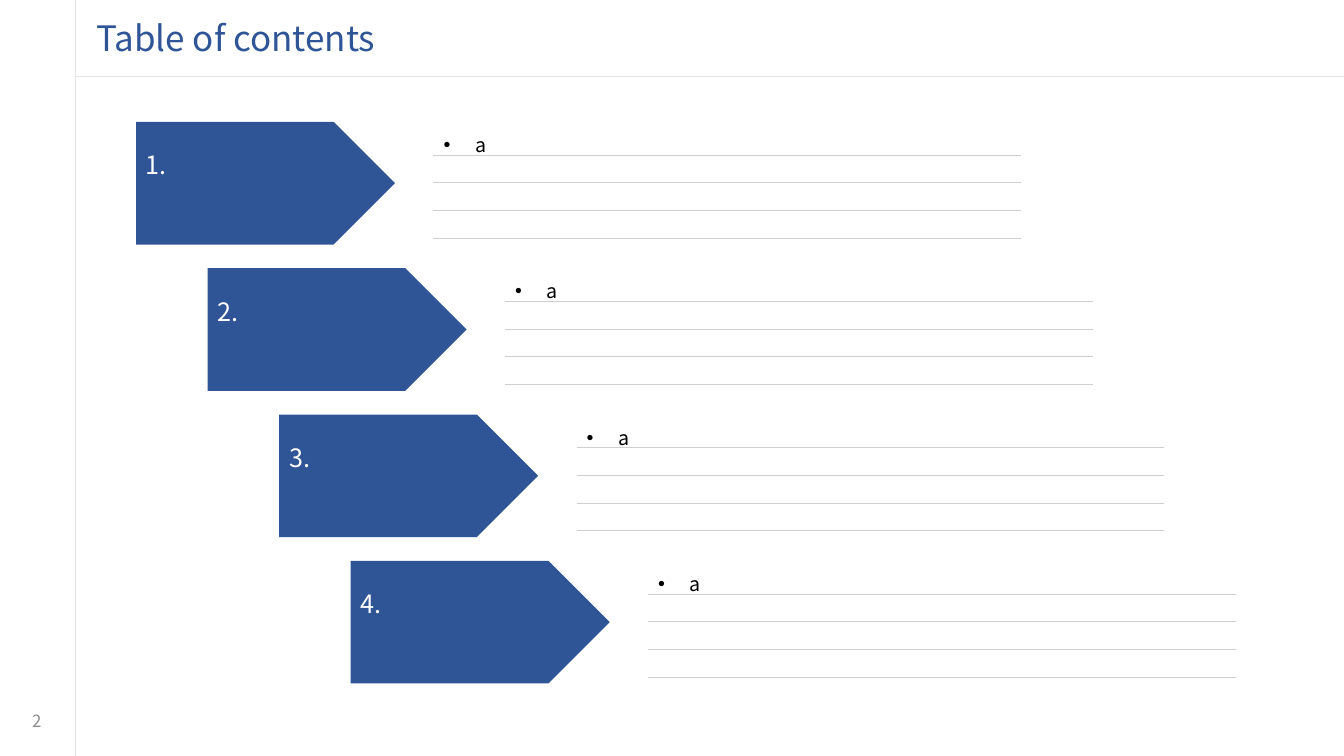
from lxml import etree
from pptx import Presentation
from pptx import util as u
from pptx.dml.color import RGBColor
from pptx.enum import shapes, text
from pptx.oxml import ns

Pt = u.Pt
FONT = "Noto Sans CJK KR"
COLORS = {"blue": "2F5597", "frame": "E7E6E6", "rule": "D0CECE",
          "number": "8C8C8C", "white": "FFFFFF", "black": "000000"}


def add_line(x1, y1, x2, y2, color):
    c = s.shapes.add_connector(shapes.MSO_CONNECTOR.STRAIGHT,
                               Pt(x1), Pt(y1), Pt(x2), Pt(y2))
    c.line.color.rgb = RGBColor.from_string(COLORS[color])
    c.line.width = Pt(0.5)
    etree.SubElement(c._element.spPr, ns.qn("a:effectLst"))


def set_text(sp, words, size, color, anchor, align, spacing, insets):
    tf = sp.text_frame
    tf.text = words
    tf.word_wrap = True
    tf.auto_size = text.MSO_AUTO_SIZE.NONE
    tf.vertical_anchor = anchor
    tf.margin_left, tf.margin_top, tf.margin_right, tf.margin_bottom = map(Pt, insets)
    p = tf.paragraphs[0]
    p.alignment = align
    p.line_spacing = spacing
    p.space_before = Pt(0)
    r = p.runs[0]
    r.font.name = FONT
    r.font.size = Pt(size)
    r.font.bold = False
    r.font.color.rgb = RGBColor.from_string(COLORS[color])
    return p


prs = Presentation()
prs.slide_width, prs.slide_height = Pt(960), Pt(540)
s = prs.slides.add_slide(prs.slide_layouts.get_by_name("Comparison"))
MIDDLE, TOP = text.MSO_ANCHOR.MIDDLE, text.MSO_ANCHOR.TOP
LEFT, CENTER = text.PP_ALIGN.LEFT, text.PP_ALIGN.CENTER

# Frame lines
add_line(53.6, 0, 53.6, 540, "frame")
add_line(54.5, 54.5, 960, 54.5, "frame")

# Title
title = s.shapes.title
title.left, title.top, title.width, title.height = Pt(54.5), Pt(4.3), Pt(905), Pt(49)
set_text(title, "Table of contents", 25, "blue", MIDDLE, LEFT, 0.9, (14.4, 3.6, 7.2, 3.6))

# Slide number
sp = s.shapes.add_textbox(Pt(0), Pt(500.4), Pt(52.6), Pt(28.8))
set_text(sp, "2", 12, "number", MIDDLE, CENTER, 1.0, (7.2, 3.6, 7.2, 3.6))

# Staircase of sections: arrow, ruled lines, list
bodies = [ph for ph in s.placeholders if ph.placeholder_format.idx > 0]
for i, body in enumerate(bodies):
    x, y = 97.2 + 51.12 * i, 87.1 + 104.5 * i
    list_x = x + 212.4

    arrow = s.shapes.add_shape(shapes.MSO_SHAPE.PENTAGON, Pt(x), Pt(y), Pt(185), Pt(87.6))
    arrow.shadow.inherit = False
    arrow.fill.solid()
    arrow.fill.fore_color.rgb = RGBColor.from_string(COLORS["blue"])
    arrow.line.fill.background()
    # The deep bottom inset lifts the number above the middle
    set_text(arrow, f"{i + 1}.", 18, "white", MIDDLE, LEFT, 1.0, (7.2, 3.6, 7.2, 30))

    for k in range(4):
        rule_y = y + 23.7 + 19.75 * k
        add_line(list_x, rule_y, list_x + 419.7, rule_y, "rule")

    body.left, body.top, body.width, body.height = Pt(list_x), Pt(y + 4.5), Pt(482.4), Pt(87.6)
    p = set_text(body, "a", 14, "black", TOP, LEFT, 1.2, (7.2, 0, 7.2, 3.6))
    pPr = p._p.get_or_add_pPr()
    pPr.set("marL", str(Pt(22.5)))
    pPr.set("indent", str(-Pt(22.5)))
    etree.SubElement(pPr, ns.qn("a:buFont")).set("typeface", "Arial")
    etree.SubElement(pPr, ns.qn("a:buChar")).set("char", "•")

prs.save("out.pptx")
